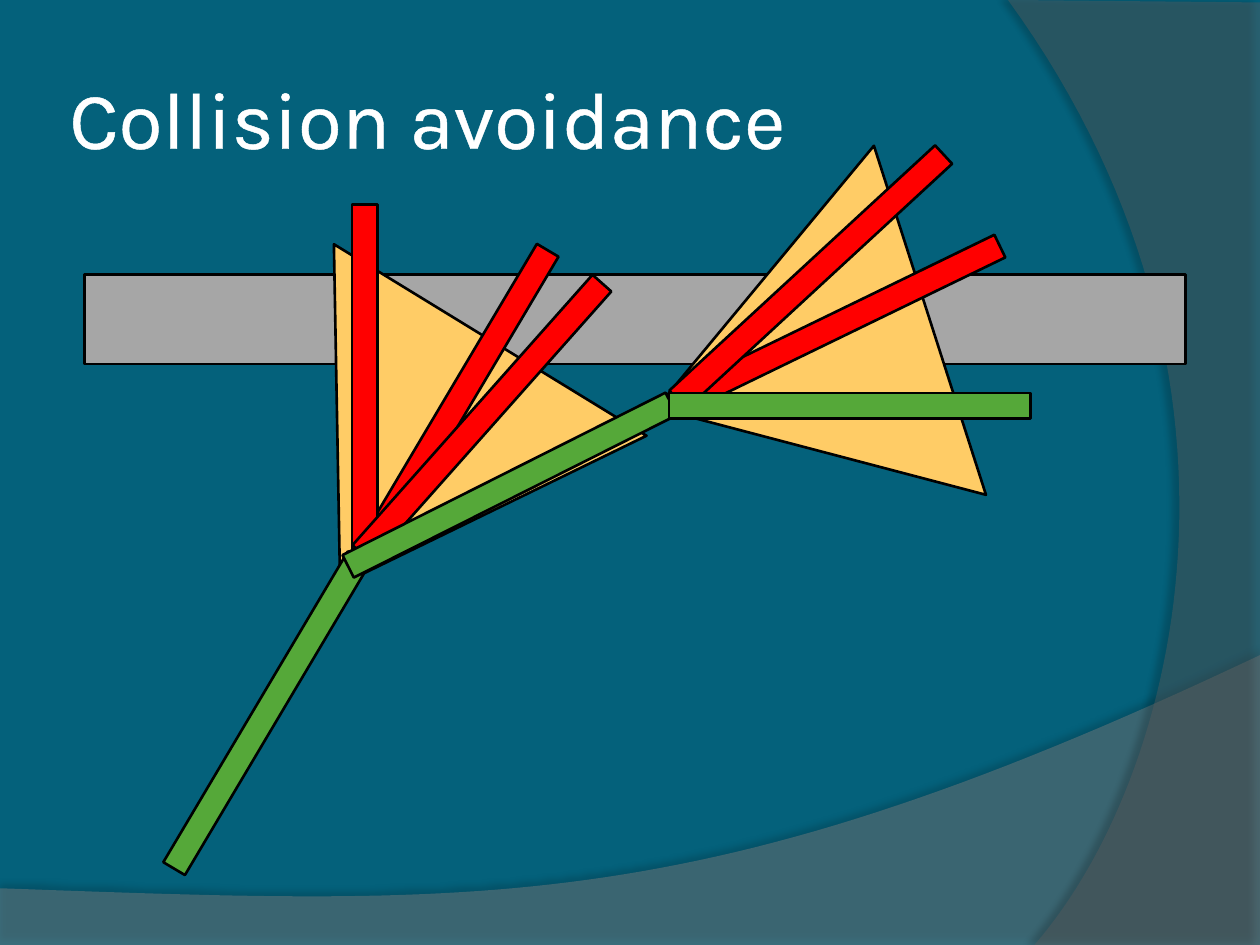
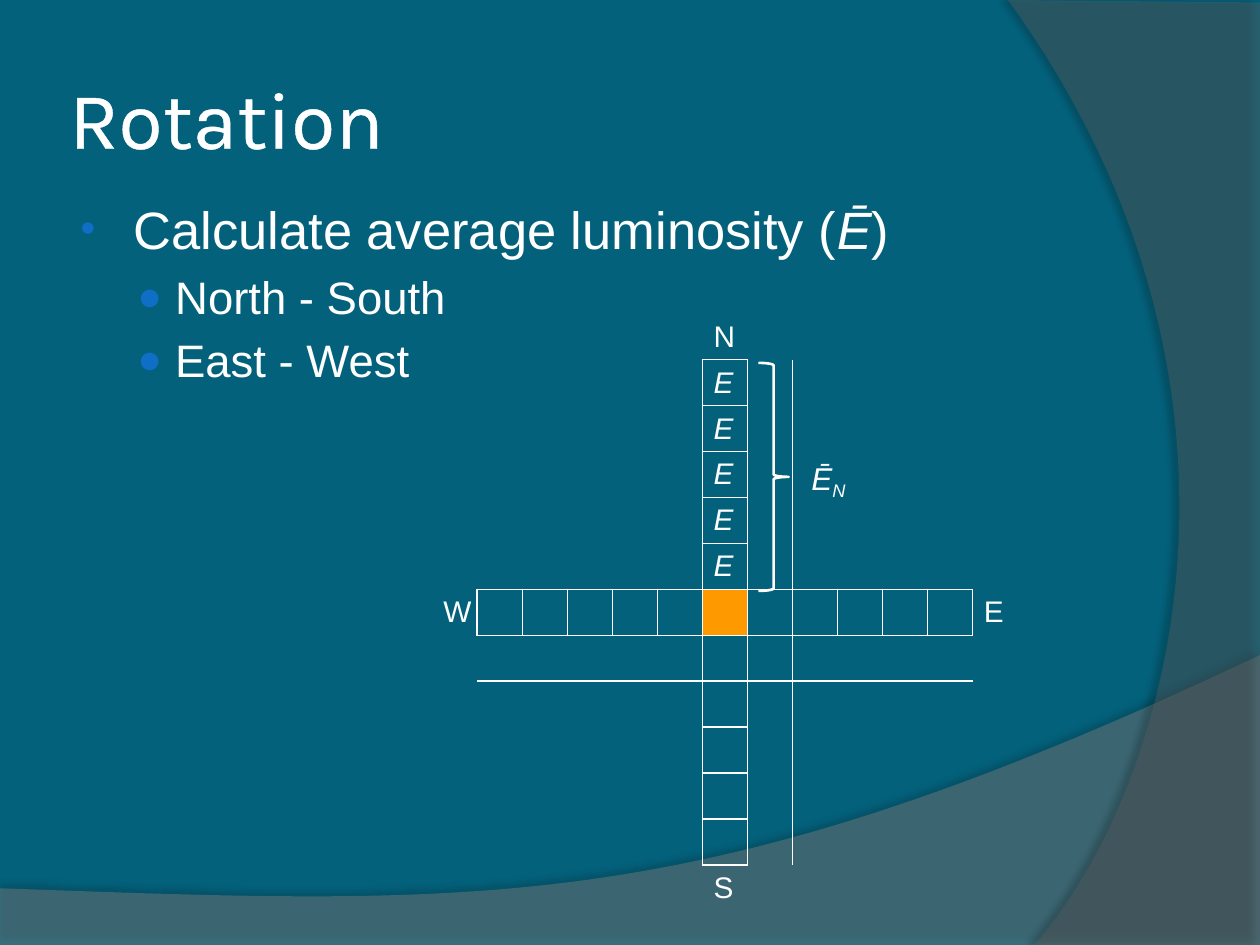
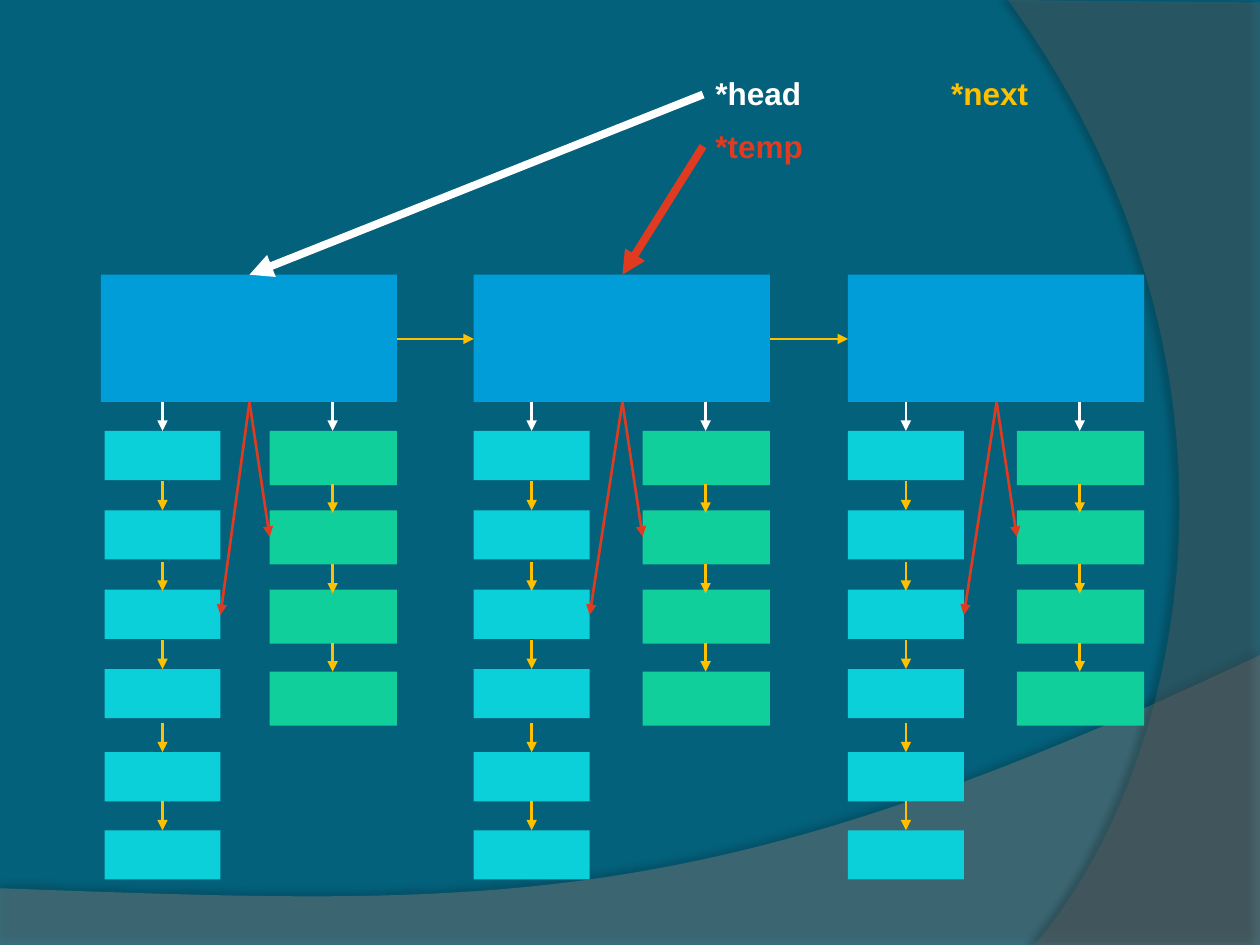
"""Build three slides on collision avoidance, rotation and linked lists."""
from dataclasses import dataclass

from lxml.etree import SubElement
from pptx import Presentation
from pptx.dml.color import RGBColor
from pptx.enum.shapes import MSO_CONNECTOR as Connector, MSO_SHAPE as Preset
from pptx.enum.text import MSO_ANCHOR as Anchor, MSO_AUTO_SIZE as AutoSize, PP_ALIGN as Align
from pptx.oxml import parse_xml
from pptx.oxml.ns import nsdecls, qn
from pptx.presentation import Presentation as Deck
from pptx.shapes.autoshape import Shape
from pptx.slide import Slide
from pptx.util import Emu, Pt

SCALE = 9144
COLOURS = {
    "background": "04617B", "lower band": "7F7F7F", "side band": "5E5E5E",
    "white": "FFFFFF", "black": "000000", "bullet": "0F6FC6",
    "wall": "A6A6A6", "range": "FFCC66", "arm": "55A839", "blocked": "FF0000",
    "centre": "FF9900", "node": "009DD9", "chain": "0BD0D9", "list": "10CF9B",
    "next": "FFC000", "temp": "E03B20",
}
Point = tuple[int, int]


@dataclass(frozen=True)
class Band:
    corners: tuple[Point, ...]
    curve: tuple[Point, Point, Point, Point]
    colour: str
    opacity: int
    shadow_opacity: int
    shadow_distance: float
    shadow_angle: int


@dataclass(frozen=True)
class Block:
    left: int
    top: int
    width: int
    height: int
    colour: str
    preset: Preset = Preset.RECTANGLE
    rotation: float = 0


@dataclass(frozen=True)
class Bullet:
    runs: tuple[str, ...]
    level: int
    size: int
    mark: str
    mark_percent: int
    margin: int
    indent: int


@dataclass(frozen=True)
class Stack:
    width: int
    height: int
    tops: tuple[int, ...]
    tips: tuple[int, ...]
    colour: str
    arrow_offset: int


@dataclass(frozen=True)
class Label:
    text: str
    left: int
    top: int
    width: int
    colour: str


BANDS = (
    Band(((0, 705), (0, 750), (1000, 750)),
         ((1000, 520), (559, 729), (391, 719), (0, 705)),
         "lower band", 45, 35, 3.5, 270),
    Band(((1000, 2), (1000, 750)),
         ((821, 750), (935, 619), (1018, 300), (800, 0)),
         "side band", 40, 45, 4, 180),
)


def bar(left: int, top: int, colour: str, rotation: float) -> Block:
    """Describe one position of an arm segment."""
    return Block(left, top, 287, 20, colour, rotation=rotation)


def sweep(left: int, top: int, rotation: float) -> Block:
    """Describe the range swept by an arm segment."""
    return Block(left, top, 291, 228, "range", Preset.ISOSCELES_TRIANGLE, rotation)


ARM_SCENE = (
    Block(67, 218, 874, 71, "wall"),
    sweep(484, 175, 252.2),
    sweep(184, 253, 211.5),
    bar(68, 556, "arm", 300.7),
    bar(218, 312, "blocked", 300.7),
    bar(146, 296, "blocked", 270),
    bar(239, 322, "blocked", 311.6),
    bar(261, 375, "arm", 333.3),
    bar(521, 248, "blocked", 334.1),
    bar(500, 210, "blocked", 317.3),
    bar(531, 312, "arm", 0),
)
BULLETS = (
    Bullet(("Calculate average luminosity (", "Ē", ")"), 0, 30, "•", 80, 46, -42),
    Bullet(("North - South",), 1, 26, "●", 90, 79, -30),
    Bullet(("East - West",), 1, 26, "●", 90, 79, -30),
)
GRID_SIZE = 13
GRID_MIDDLE = GRID_SIZE // 2
GRID_SIDES = {"lnL": (0, -1), "lnR": (0, 1), "lnT": (-1, 0), "lnB": (1, 0)}
COMPASS = {(0, GRID_MIDDLE): "N", (GRID_MIDDLE, 0): "W",
           (GRID_MIDDLE, GRID_SIZE - 1): "E", (GRID_SIZE - 1, GRID_MIDDLE): "S"}

NODE_TOP, NODE_WIDTH, NODE_HEIGHT = 218, 235, 101
NODE_BOTTOM = NODE_TOP + NODE_HEIGHT
NODE_LEFTS = (80, 376, 673)
CHAIN_LEFTS = (83, 376, 673)
LIST_OFFSET = 134
ARROW_LENGTH = 23
CHAIN = Stack(92, 39, (342, 405, 468, 531, 597, 659),
              (342, 405, 469, 531, 597, 659), "chain", 46)
LIST = Stack(101, 43, (342, 405, 468, 533), (342, 407, 471, 533), "list", 50)
POINTERS = (
    Label("*head", 558, 54, 228, "white"),
    Label("*temp", 558, 96, 228, "temp"),
    Label("*next", 745, 54, 225, "next"),
)


def px(length: float) -> Emu:
    """Turn px into EMU."""
    return Emu(round(length * SCALE))


def rgb(name: str) -> RGBColor:
    """Look up a colour by name."""
    return RGBColor.from_string(COLOURS[name])


def solid(name: str) -> str:
    """Give the XML of a solid fill."""
    return f'<a:solidFill><a:srgbClr val="{COLOURS[name]}"/></a:solidFill>'


def curve_points(curve: tuple[Point, ...], steps: int = 60) -> list[tuple[Emu, Emu]]:
    """Sample a cubic curve."""
    points = []
    for step in range(steps + 1):
        t = step / steps
        weights = ((1 - t) ** 3, 3 * t * (1 - t) ** 2, 3 * t * t * (1 - t), t ** 3)
        x, y = (sum(w * point[axis] for w, point in zip(weights, curve)) for axis in (0, 1))
        points.append((px(x), px(y)))
    return points


def draw_band(slide: Slide, band: Band) -> Shape:
    """Draw a translucent curved band with a soft shadow."""
    start, *rest = [(px(x), px(y)) for x, y in band.corners]
    builder = slide.shapes.build_freeform(*start)
    builder.add_line_segments(rest + curve_points(band.curve), close=True)
    shape = builder.convert_to_shape()
    shape.fill.solid()
    shape.fill.fore_color.rgb = rgb(band.colour)
    shape.line.fill.background()
    shape.shadow.inherit = False
    tint = shape.element.spPr.find(qn("a:solidFill"))[0]
    SubElement(tint, qn("a:alpha"), val=str(band.opacity * 1000))
    shape.element.spPr.find(qn("a:effectLst")).append(parse_xml(
        f'<a:outerShdw {nsdecls("a")} blurRad="{Pt(4)}" dist="{Pt(band.shadow_distance)}" '
        f'dir="{band.shadow_angle * 60000}" algn="ctr" rotWithShape="0">'
        f'<a:srgbClr val="{COLOURS["black"]}">'
        f'<a:alpha val="{band.shadow_opacity * 1000}"/></a:srgbClr></a:outerShdw>'))
    return shape


def style_master(deck: Deck, slide: Slide) -> None:
    """Give the master its background and bands."""
    master = deck.slide_master
    master.background.fill.solid()
    master.background.fill.fore_color.rgb = rgb("background")
    for index, band in enumerate(BANDS):
        element = draw_band(slide, band).element
        element.xpath("./p:nvSpPr/p:cNvPr")[0].set("id", str(100 + index))
        master.shapes.element.insert(2 + index, element)


def place(box: Shape, left: int, top: int, width: int, height: int) -> None:
    """Move and size a shape."""
    box.left, box.top, box.width, box.height = map(px, (left, top, width, height))


def set_title(slide: Slide, text: str) -> None:
    """Fill and format the title placeholder."""
    title = slide.shapes.title
    place(title, 50, 30, 817, 125)
    frame = title.text_frame
    frame.text = text
    frame.auto_size = AutoSize.NONE
    frame.vertical_anchor = Anchor.MIDDLE
    frame.margin_left = frame.margin_right = frame.margin_top = frame.margin_bottom = px(5)
    para = frame.paragraphs[0]
    para.alignment = Align.LEFT
    para.font.name, para.font.size = "Karla", Pt(46)
    para.font.color.rgb = rgb("white")
    title.element.xpath(".//a:defRPr")[0].insert(0, parse_xml(
        f'<a:ln {nsdecls("a")} w="{Pt(1.45)}">{solid("white")}</a:ln>'))


def draw_block(slide: Slide, block: Block, outline: str | None = None) -> None:
    """Draw a filled preset shape."""
    shape = slide.shapes.add_shape(
        block.preset, *map(px, (block.left, block.top, block.width, block.height)))
    shape.rotation = block.rotation
    shape.shadow.inherit = False
    shape.fill.solid()
    shape.fill.fore_color.rgb = rgb(block.colour)
    if outline:
        shape.line.color.rgb = rgb(outline)
        shape.line.width = Pt(1.5)
    else:
        shape.line.fill.background()


def draw_arrow(slide: Slide, start: Point, end: Point, colour: str, width: float = 1.5) -> None:
    """Draw a straight arrow."""
    arrow = slide.shapes.add_connector(Connector.STRAIGHT, *map(px, start + end))
    arrow.line.color.rgb = rgb(colour)
    arrow.line.width = Pt(width)
    properties = arrow.element.spPr
    SubElement(properties.find(qn("a:ln")), qn("a:tailEnd"), type="triangle")
    SubElement(properties, qn("a:effectLst"))


def add_label(slide: Slide, label: Label) -> Shape:
    """Add a one-line text box."""
    box = slide.shapes.add_textbox(*map(px, (label.left, label.top, label.width, 40)))
    box.text_frame.word_wrap = True
    para = box.text_frame.paragraphs[0]
    para.text = label.text
    para.font.name, para.font.size = "Arial", Pt(18)
    para.font.color.rgb = rgb(label.colour)
    return box


def fill_bullets(body: Shape) -> None:
    """Write the bullet list into the body placeholder."""
    place(body, 50, 147, 817, 181)
    frame = body.text_frame
    frame.auto_size = AutoSize.NONE
    frame.margin_top = px(9)
    for index, bullet in enumerate(BULLETS):
        para = frame.add_paragraph() if index else frame.paragraphs[0]
        para.level = bullet.level
        if index == 0:
            para.space_before = Pt(0)
        properties = body.element.xpath(".//a:p")[-1].get_or_add_pPr()
        properties.set("marL", str(px(bullet.margin)))
        properties.set("indent", str(px(bullet.indent)))
        colour = SubElement(properties, qn("a:buClr"))
        SubElement(colour, qn("a:srgbClr"), val=COLOURS["bullet"])
        SubElement(properties, qn("a:buSzPct"), val=str(bullet.mark_percent * 1000))
        SubElement(properties, qn("a:buFont"), typeface="Arial")
        SubElement(properties, qn("a:buChar"), char=bullet.mark)
        para.font.name, para.font.size = "Arial", Pt(bullet.size)
        para.font.color.rgb = rgb("white")
        for text in bullet.runs:
            span = para.add_run()
            span.text = text
            if text == "Ē":
                span.font.italic = True


def in_cross(row: int, column: int) -> bool:
    """Tell whether a grid cell belongs to the cross."""
    return GRID_MIDDLE in (row, column) and all(
        0 < place_in_line < GRID_SIZE - 1 for place_in_line in (row, column))


def draw_grid(slide: Slide) -> None:
    """Draw the compass cross as a table."""
    table_frame = slide.shapes.add_table(
        GRID_SIZE, GRID_SIZE, px(343), px(249), px(465), px(474))
    table = table_frame.table
    table.first_row = table.horz_banding = False
    style = table_frame.element.xpath(".//a:tableStyleId")[0]
    style.text = "{2D5ABB26-0587-4C30-8999-92F81FD0307C}"
    for index, cell in enumerate(table.iter_cells()):
        row, column = divmod(index, GRID_SIZE)
        cell.margin_left = cell.margin_right = px(9)
        cell.margin_top = cell.margin_bottom = px(2)
        cell.vertical_anchor = Anchor.MIDDLE
        sampled = in_cross(row, column) and row < GRID_MIDDLE
        para = cell.text_frame.paragraphs[0]
        para.text = "E" if sampled else COMPASS.get((row, column), "")
        para.font.name, para.font.size = "Arial", Pt(17)
        para.font.color.rgb = rgb("white")
        para.font.italic = sampled
        properties = cell._tc.get_or_add_tcPr()
        for side, (down, across) in GRID_SIDES.items():
            if in_cross(row, column) or in_cross(row + down, column + across):
                properties.append(parse_xml(
                    f'<a:{side} {nsdecls("a")} w="{Pt(1)}">{solid("white")}</a:{side}>'))
        if row == column == GRID_MIDDLE:
            cell.fill.solid()
            cell.fill.fore_color.rgb = rgb("centre")
        else:
            cell.fill.background()


def draw_stack(slide: Slide, left: int, stack: Stack) -> None:
    """Draw a column of boxes with an arrow into each."""
    for top in stack.tops:
        draw_block(slide, Block(left, top, stack.width, stack.height, stack.colour))
    x = left + stack.arrow_offset
    for index, tip in enumerate(stack.tips):
        draw_arrow(slide, (x, tip - ARROW_LENGTH), (x, tip), "next" if index else "white")


def build_collision(slide: Slide) -> None:
    """Build the arm and wall scene."""
    set_title(slide, "Collision avoidance")
    for block in ARM_SCENE:
        draw_block(slide, block, "black")


def build_rotation(slide: Slide) -> None:
    """Build the luminosity slide."""
    set_title(slide, "Rotation")
    fill_bullets(slide.placeholders[1])
    draw_grid(slide)
    brace = slide.shapes.add_shape(Preset.RIGHT_BRACE, *map(px, (602, 288, 24, 181)))
    brace.shadow.inherit = False
    brace.fill.background()
    brace.line.color.rgb = rgb("white")
    brace.line.width = Pt(1.5)
    label = add_label(slide, Label("Ē", 634, 359, 71, "white"))
    para = label.text_frame.paragraphs[0]
    para.font.italic = True
    para.add_run().text = "N"
    label.element.xpath(".//a:r")[-1].get_or_add_rPr().set("baseline", "-25000")


def build_lists(slide: Slide) -> None:
    """Build the linked list diagram."""
    for left, chain_left in zip(NODE_LEFTS, CHAIN_LEFTS):
        list_left = left + LIST_OFFSET
        draw_block(slide, Block(left, NODE_TOP, NODE_WIDTH, NODE_HEIGHT, "node"))
        draw_stack(slide, chain_left, CHAIN)
        draw_stack(slide, list_left, LIST)
        for end in ((chain_left + CHAIN.width, 488), (list_left, 426)):
            draw_arrow(slide, (left + 118, NODE_BOTTOM), end, "temp")
    for left, following in zip(NODE_LEFTS, NODE_LEFTS[1:]):
        draw_arrow(slide, (left + NODE_WIDTH, 269), (following, 269), "next")
    draw_arrow(slide, (558, 75), (NODE_LEFTS[0] + 118, NODE_TOP), "white", 4.5)
    draw_arrow(slide, (558, 116), (NODE_LEFTS[1] + 118, NODE_TOP), "temp", 4.5)
    for pointer in POINTERS:
        add_label(slide, pointer).text_frame.paragraphs[0].font.bold = True


def main() -> None:
    """Build and save the deck."""
    deck = Presentation()
    deck.slide_width, deck.slide_height = px(1000), px(750)
    collision, rotation, lists = (
        deck.slides.add_slide(deck.slide_layouts[index]) for index in (5, 1, 6))
    style_master(deck, collision)
    build_collision(collision)
    build_rotation(rotation)
    build_lists(lists)
    deck.save("out.pptx")


if __name__ == "__main__":
    main()
